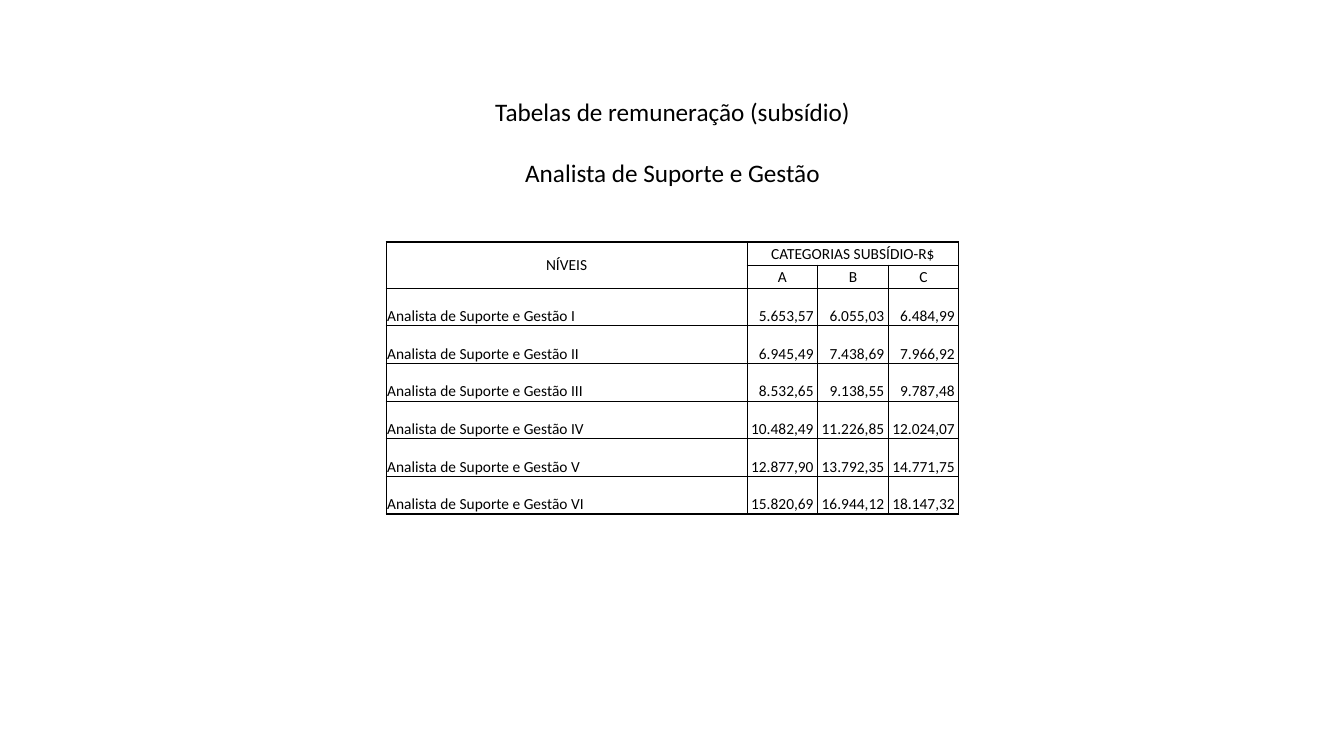
from dataclasses import dataclass

import lxml.etree
import pptx
import pptx.dml.color
import pptx.enum.text
import pptx.oxml.ns
import pptx.util

Inches = pptx.util.Inches
Pt = pptx.util.Pt
ALIGN = pptx.enum.text.PP_ALIGN
ANCHOR = pptx.enum.text.MSO_ANCHOR
FONT = "Calibri"
BLACK = "000000"


@dataclass
class Level:
    numeral: str
    pay: tuple[str, str, str]


CATEGORIES = ("A", "B", "C")
LEVELS = [
    Level("I", ("5.653,57", "6.055,03", "6.484,99")),
    Level("II", ("6.945,49", "7.438,69", "7.966,92")),
    Level("III", ("8.532,65", "9.138,55", "9.787,48")),
    Level("IV", ("10.482,49", "11.226,85", "12.024,07")),
    Level("V", ("12.877,90", "13.792,35", "14.771,75")),
    Level("VI", ("15.820,69", "16.944,12", "18.147,32")),
]
TABLE_HEIGHT, HEADER_HEIGHT = 2.7, 0.23
LEVEL_HEIGHT = (TABLE_HEIGHT - 2 * HEADER_HEIGHT) / len(LEVELS)
LABEL_WIDTH, PAY_WIDTH = 3.58, 0.7


def rgb(color: str) -> pptx.dml.color.RGBColor:
    return pptx.dml.color.RGBColor.from_string(color)


def add_run(p, text: str, size: float, align) -> None:
    p.alignment = align
    r = p.add_run()
    r.text = text
    r.font.name = FONT
    r.font.size = Pt(size)
    r.font.bold = False
    r.font.color.rgb = rgb(BLACK)


def add_borders(cell, color: str, width: float) -> None:
    qn = pptx.oxml.ns.qn
    tc_pr = cell._tc.get_or_add_tcPr()
    for side in ("lnL", "lnR", "lnT", "lnB"):
        ln = lxml.etree.SubElement(tc_pr, qn(f"a:{side}"), w=str(Pt(width)))
        fill = lxml.etree.SubElement(ln, qn("a:solidFill"))
        lxml.etree.SubElement(fill, qn("a:srgbClr"), val=color)


def write_cell(cell, text: str, align, anchor, right: float = 0.01) -> None:
    cell.margin_left = cell.margin_top = Inches(0.01)
    cell.margin_right = Inches(right)
    cell.margin_bottom = 0
    cell.vertical_anchor = anchor
    add_run(cell.text_frame.paragraphs[0], text, 11, align)


def add_title(s) -> None:
    sp = s.shapes.title
    sp.left, sp.top, sp.width, sp.height = map(Inches, (1.99, 0.91, 9.36, 1.01))
    tf = sp.text_frame
    tf.word_wrap = True
    tf.auto_size = pptx.enum.text.MSO_AUTO_SIZE.NONE
    tf.vertical_anchor = ANCHOR.TOP
    add_run(tf.paragraphs[0], "Tabelas de remuneração (subsídio)", 18, ALIGN.CENTER)
    p = tf.add_paragraph()
    p.space_before = Pt(22)
    add_run(p, "Analista de Suporte e Gestão", 18, ALIGN.CENTER)


def add_pay_table(s) -> None:
    widths = [LABEL_WIDTH] + [PAY_WIDTH] * len(CATEGORIES)
    heights = [HEADER_HEIGHT] * 2 + [LEVEL_HEIGHT] * len(LEVELS)
    table = s.shapes.add_table(
        len(heights), len(widths), Inches(3.83), Inches(2.4),
        Inches(sum(widths)), Inches(TABLE_HEIGHT)).table
    table.first_row = table.horz_banding = False
    for column, width in zip(table.columns, widths):
        column.width = Inches(width)
    for row, height in zip(table.rows, heights):
        row.height = Inches(height)
    for cell in table.iter_cells():
        add_borders(cell, BLACK, 1)
        cell.fill.background()

    table.cell(0, 0).merge(table.cell(1, 0))
    table.cell(0, 1).merge(table.cell(0, len(CATEGORIES)))
    write_cell(table.cell(0, 0), "NÍVEIS", ALIGN.CENTER, ANCHOR.MIDDLE)
    write_cell(table.cell(0, 1), "CATEGORIAS SUBSÍDIO-R$", ALIGN.CENTER, ANCHOR.MIDDLE)
    for col, category in enumerate(CATEGORIES, 1):
        write_cell(table.cell(1, col), category, ALIGN.CENTER, ANCHOR.MIDDLE)
    for row, level in enumerate(LEVELS, 2):
        write_cell(table.cell(row, 0), f"Analista de Suporte e Gestão {level.numeral}",
                   ALIGN.LEFT, ANCHOR.BOTTOM)
        for col, amount in enumerate(level.pay, 1):
            write_cell(table.cell(row, col), amount, ALIGN.RIGHT, ANCHOR.BOTTOM, 0.04)


def main() -> None:
    prs = pptx.Presentation()
    prs.slide_width, prs.slide_height = Inches(13.33), Inches(7.5)
    s = prs.slides.add_slide(prs.slide_layouts.get_by_name("Title Only"))
    add_title(s)
    add_pay_table(s)
    prs.save("out.pptx")


if __name__ == "__main__":
    main()
